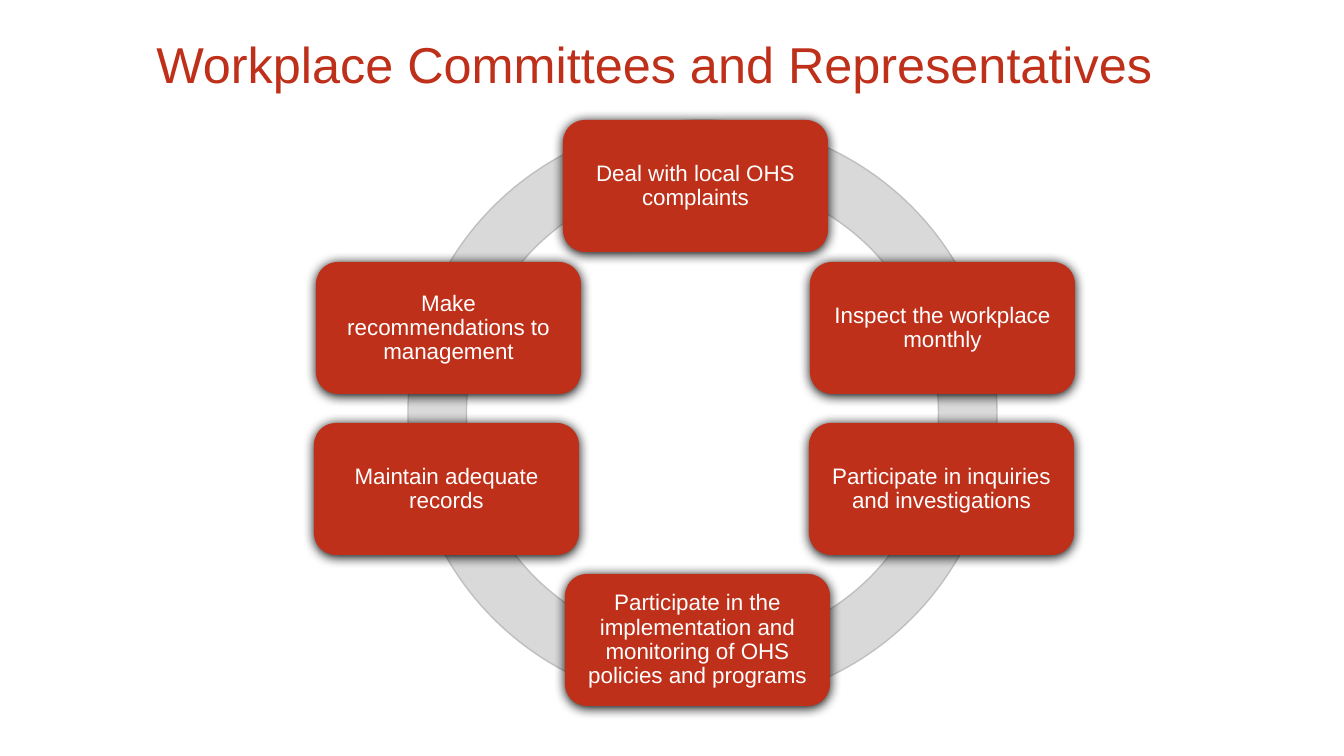
"""Build a slide showing the duties of workplace committees as a ring of cards."""
from lxml import etree
from pptx import Presentation
from pptx.dml.color import RGBColor
from pptx.enum.shapes import MSO_SHAPE
from pptx.enum.text import MSO_ANCHOR, PP_ALIGN
from pptx.oxml.ns import qn
from pptx.util import Pt

DONUT = MSO_SHAPE.DONUT
ROUNDED = MSO_SHAPE.ROUNDED_RECTANGLE
MIDDLE = MSO_ANCHOR.MIDDLE
CENTER = PP_ALIGN.CENTER

SLIDE = (1344, 756)
TITLE = "Workplace Committees and Representatives"
TITLE_AREA = (138, 15, 1033, 105)
RING_AREA = (408, 120, 589, 585)
RING_THICKNESS = 0.1
CARD_SIZE = (265, 132)
CARD_INSET = 8
CARDS = [
    ("Deal with local OHS complaints", 563, 120),
    ("Inspect the workplace monthly", 810, 262),
    ("Participate in inquiries and investigations", 809, 423),
    ("Participate in the implementation and monitoring of OHS policies and programs", 565, 574),
    ("Maintain adequate records", 314, 423),
    ("Make recommendations to management", 316, 262),
]
COLORS = {"red": "BF301A", "ring": "D9D9D9", "edge": "BFBFBF", "text": "FFFFFF", "shadow": "000000"}


def px(*lengths):
    return [round(length * 914400 / 100.8) for length in lengths]


def color(name):
    return RGBColor.from_string(COLORS[name])


def write(box, text, size, ink, inset):
    frame = box.text_frame
    frame.word_wrap = True
    frame.vertical_anchor = MIDDLE
    frame.margin_left, frame.margin_top, frame.margin_right, frame.margin_bottom = px(*[inset] * 4)
    para = frame.paragraphs[0]
    para.alignment = CENTER
    para.line_spacing = 0.9
    span = para.add_run()
    span.text = text
    span.font.name = "Arial"
    span.font.size = Pt(size)
    span.font.color.rgb = color(ink)


def add_shape(page, kind, area, fill):
    shape = page.shapes.add_shape(kind, *px(*area))
    shape.shadow.inherit = False
    shape.fill.solid()
    shape.fill.fore_color.rgb = color(fill)
    shape.line.fill.background()
    return shape


def add_glow_shadow(shape):
    effects = shape.element.spPr.find(qn("a:effectLst"))
    shadow = etree.SubElement(effects, qn("a:outerShdw"), blurRad=str(Pt(8.5)), dist=str(Pt(1)),
                              dir="5400000", algn="ctr", rotWithShape="0")
    etree.SubElement(shadow, qn("a:srgbClr"), val=COLORS["shadow"])


def main():
    deck = Presentation()
    deck.slide_width, deck.slide_height = px(*SLIDE)
    page = deck.slides.add_slide(deck.slide_layouts[6])

    title = page.shapes.add_textbox(*px(*TITLE_AREA))
    write(title, TITLE, size=36, ink="red", inset=5)

    ring = add_shape(page, DONUT, RING_AREA, fill="ring")
    ring.adjustments[0] = RING_THICKNESS
    ring.line.color.rgb = color("edge")
    ring.line.width = Pt(1)

    for text, left, top in CARDS:
        card = add_shape(page, ROUNDED, (left, top, *CARD_SIZE), fill="red")
        add_glow_shadow(card)
        write(card, text, size=16, ink="text", inset=CARD_INSET)

    deck.save("out.pptx")


if __name__ == "__main__":
    main()
